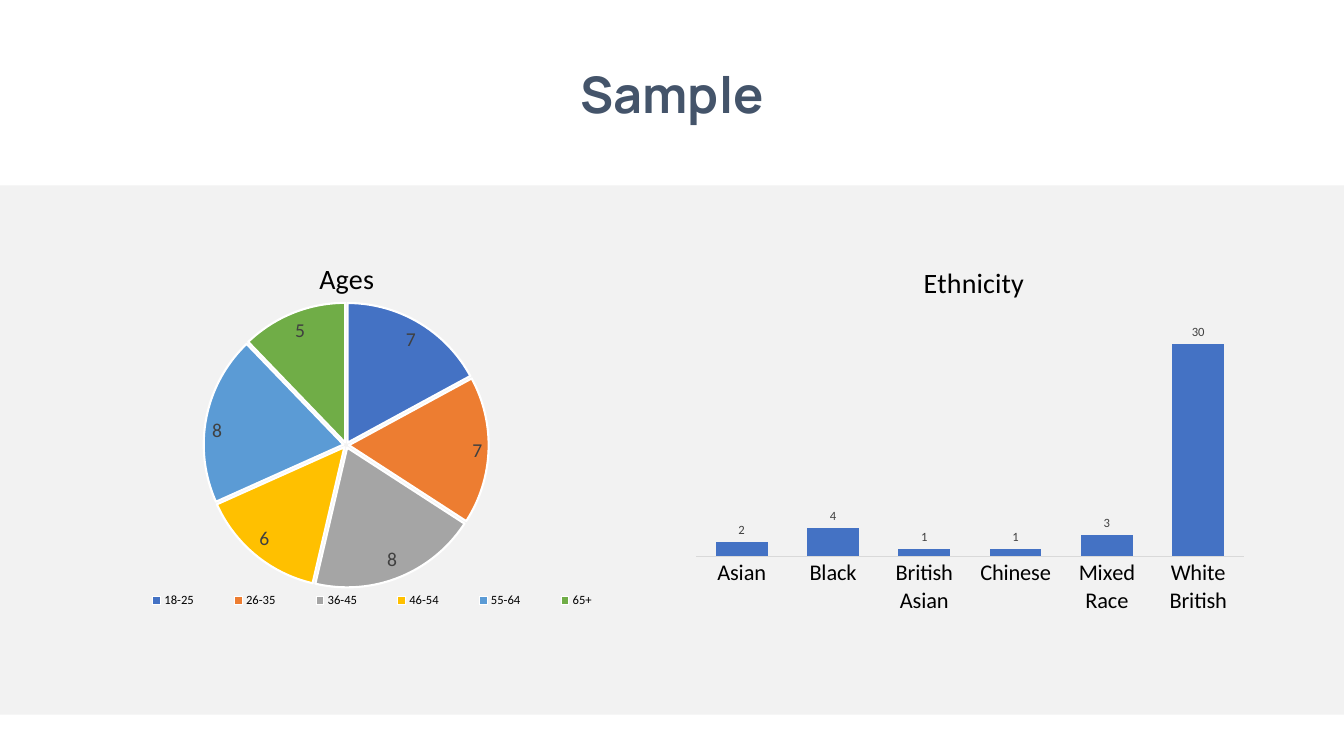
from lxml import etree
from pptx import Presentation
from pptx.chart.data import CategoryChartData
from pptx.dml.color import RGBColor
from pptx.enum import chart as ch, shapes, text
from pptx.oxml import ns
from pptx.util import Inches, Pt

WHITE = RGBColor(0xFF, 0xFF, 0xFF)
BLACK = RGBColor(0, 0, 0)
SLATE = RGBColor(0x44, 0x54, 0x6A)
PANEL = RGBColor(0xF2, 0xF2, 0xF2)
LABEL = RGBColor(0x40, 0x40, 0x40)
AXIS = RGBColor(0xD9, 0xD9, 0xD9)
BLUE = RGBColor(0x44, 0x72, 0xC4)
SLICES = [BLUE, RGBColor(0xED, 0x7D, 0x31), RGBColor(0xA5, 0xA5, 0xA5),
          RGBColor(0xFF, 0xC0, 0x00), RGBColor(0x5B, 0x9B, 0xD5), RGBColor(0x70, 0xAD, 0x47)]

HEADING = "Sample"
AGES = {
    "title": "Ages", "type": ch.XL_CHART_TYPE.PIE, "at": (0.52, 2.23, 5.77, 4.05),
    "values": {"18-25": 7, "26-35": 7, "36-45": 8, "46-54": 6, "55-64": 8, "65+": 5},
    "title_at": (0.45, 0.07), "plot_at": (0.26, 0.19, 0.49, 0.7),
    "label_size": 14, "label_position": ch.XL_LABEL_POSITION.INSIDE_END,
}
ETHNICITY = {
    "title": "Ethnicity", "type": ch.XL_CHART_TYPE.COLUMN_CLUSTERED, "at": (6.79, 2.33, 5.66, 3.84),
    "values": {"Asian": 2, "Black": 4, "British Asian": 1, "Chinese": 1,
               "Mixed Race": 3, "White British": 30},
    "title_at": (0.41, 0.06), "plot_at": (0.02, 0.19, 0.96, 0.64),
    "label_size": 9, "label_position": ch.XL_LABEL_POSITION.OUTSIDE_END,
}


def set_font(font, size, color, name="Calibri", bold=False):
    font.size, font.name, font.bold = Pt(size), name, bold
    font.color.rgb = color


def place(element, fractions, after, inner=False):
    for old in element.findall(ns.qn("c:layout")):
        element.remove(old)
    layout = etree.Element(ns.qn("c:layout"))
    manual = etree.SubElement(layout, ns.qn("c:manualLayout"))
    settings = [("layoutTarget", "inner")] if inner else []
    settings += [("xMode", "edge"), ("yMode", "edge")]
    settings += zip("xywh", fractions)
    for tag, value in settings:
        etree.SubElement(manual, ns.qn("c:" + tag)).set("val", str(value))
    if after is None:
        element.insert(0, layout)
    else:
        element.find(ns.qn(after)).addnext(layout)


def add_chart(s, spec_):
    data = CategoryChartData()
    data.categories = list(spec_["values"])
    data.add_series("Series 1", list(spec_["values"].values()))
    chart = s.shapes.add_chart(spec_["type"], *map(Inches, spec_["at"]), data).chart
    set_font(chart.font, 10, BLACK)
    chart.has_legend = False
    chart.has_title = True
    p = chart.chart_title.text_frame.paragraphs[0]
    p.text = spec_["title"]
    set_font(p.font, 20, BLACK)
    chart.chart_title.include_in_layout = False
    place(chart.chart_title._element, spec_["title_at"], "c:tx")
    place(chart._chartSpace.chart.plotArea, spec_["plot_at"], None, inner=True)

    plot = chart.plots[0]
    plot.has_data_labels = True
    labels = plot.data_labels
    labels.show_value = True
    labels.show_percentage = False
    labels.position = spec_["label_position"]
    set_font(labels.font, spec_["label_size"], LABEL)
    return chart


prs = Presentation()
prs.slide_width, prs.slide_height = Inches(13.33), Inches(7.5)
s = prs.slides.add_slide(prs.slide_layouts[5])

title = s.shapes.title
title.left, title.top, title.width, title.height = map(Inches, (5.57, 0.57, 2.19, 0.71))
tf = title.text_frame
tf.text = HEADING
tf.word_wrap = False
tf.vertical_anchor = text.MSO_ANCHOR.MIDDLE
p = tf.paragraphs[0]
p.alignment = text.PP_ALIGN.CENTER
set_font(p.font, 36, SLATE, "Manrope", True)

panel = s.shapes.add_shape(shapes.MSO_SHAPE.RECTANGLE, 0, Inches(1.84), prs.slide_width, Inches(5.25))
panel.shadow.inherit = False
panel.fill.solid()
panel.fill.fore_color.rgb = PANEL
panel.line.fill.background()

pie = add_chart(s, AGES)
pie.plots[0].vary_by_categories = True
ages = pie.plots[0].series[0]
ages.format.line.color.rgb = WHITE
explosion = etree.Element(ns.qn("c:explosion"))
explosion.set("val", "2")
ages._element.find(ns.qn("c:spPr")).addnext(explosion)
for i, color in enumerate(SLICES):
    fmt = ages.points[i].format
    fmt.fill.solid()
    fmt.fill.fore_color.rgb = color
    fmt.line.color.rgb = WHITE
    fmt.line.width = Pt(1.5)
pie.has_legend = True
pie.legend.position = ch.XL_LEGEND_POSITION.BOTTOM
pie.legend.include_in_layout = False
set_font(pie.legend.font, 9, BLACK)
place(pie.legend._element, (0.11, 0.885, 0.88, 0.07), "c:legendPos")

columns = add_chart(s, ETHNICITY)
plot = columns.plots[0]
plot.vary_by_categories = False
plot.gap_width, plot.overlap = 76, -27
fill = plot.series[0].format.fill
fill.solid()
fill.fore_color.rgb = BLUE
columns.value_axis.visible = False
columns.value_axis.has_major_gridlines = False
columns.value_axis.minimum_scale = 0
columns.value_axis.maximum_scale = 35
axis = columns.category_axis
axis.major_tick_mark = ch.XL_TICK_MARK.NONE
axis.format.line.color.rgb = AXIS
axis.format.line.width = Pt(0.75)
set_font(axis.tick_labels.font, 16, BLACK)

prs.save("out.pptx")
